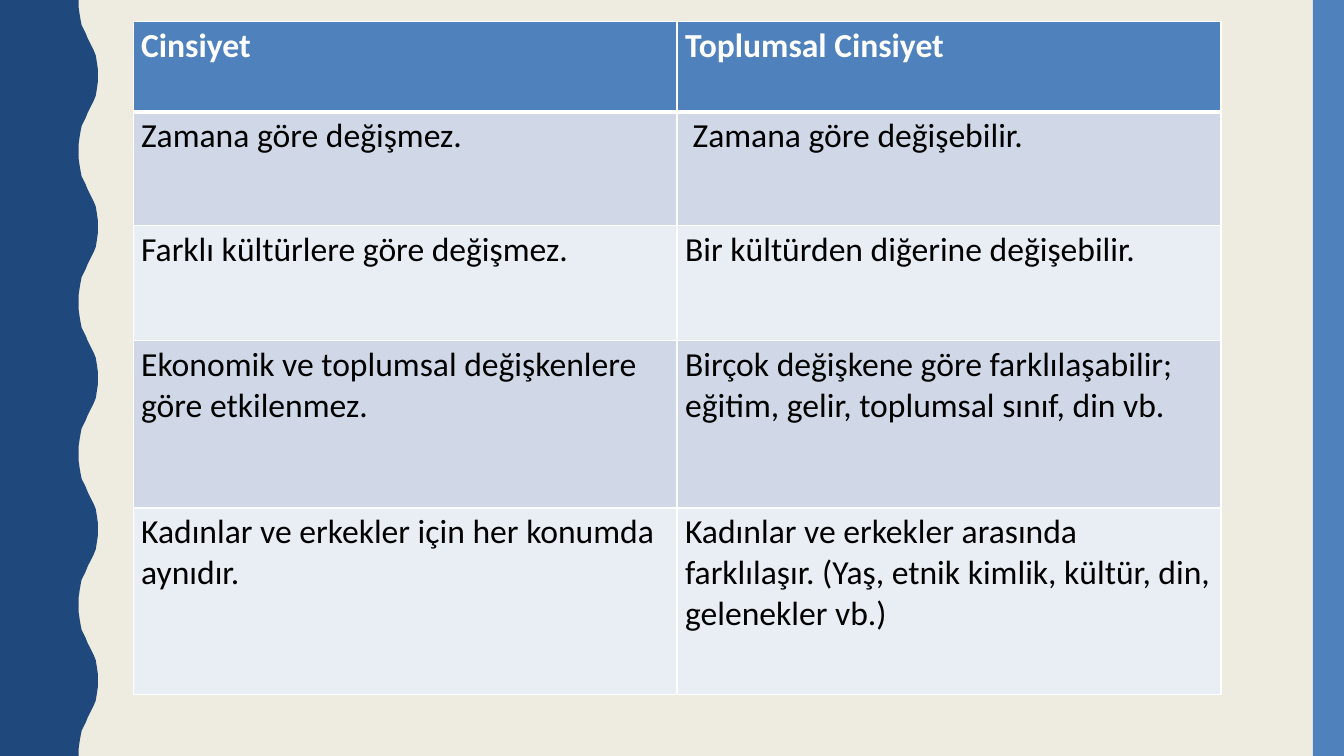
from lxml import etree
from pptx import Presentation
from pptx import util as u
from pptx.dml.color import RGBColor
from pptx.enum import shapes, text
from pptx.oxml.ns import qn

# Content
HEADINGS = ("Cinsiyet", "Toplumsal Cinsiyet")
COMPARISONS = [
    ("Zamana göre değişmez.", " Zamana göre değişebilir."),
    ("Farklı kültürlere göre değişmez.", "Bir kültürden diğerine değişebilir."),
    ("Ekonomik ve toplumsal değişkenlere göre etkilenmez.",
     "Birçok değişkene göre farklılaşabilir; eğitim, gelir, toplumsal sınıf, din vb."),
    ("Kadınlar ve erkekler için her konumda aynıdır.",
     "Kadınlar ve erkekler arasında farklılaşır. "
     "(Yaş, etnik kimlik, kültür, din, gelenekler vb.)"),
]
COLORS = {
    "background": "EEECE1", "wave": "1F497D", "accent": "4F81BD",
    "odd": "D0D8E8", "even": "E9EDF4", "white": "FFFFFF", "black": "000000",
}

# Measures in inches
WIDTH, HEIGHT = 13.33, 7.5
STRIPE_WIDTH = 0.31
TABLE_LEFT, TABLE_TOP, COLUMN_WIDTH = 1.32, 0.21, 5.395
ROW_HEIGHTS = (0.9, 1.13, 1.14, 1.66, 1.85)
WAVE_COUNT = 5
WAVE_LENGTH = HEIGHT / WAVE_COUNT
RISING_EDGE = [
    (0.78, 0), (0.78, 0.07), (0.79, 0.14), (0.8, 0.2), (0.81, 0.25),
    (0.83, 0.29), (0.85, 0.33), (0.87, 0.38), (0.89, 0.42), (0.91, 0.46),
    (0.93, 0.5), (0.95, 0.55), (0.96, 0.61), (0.97, 0.68), (0.97, 0.75),
]


def rgb(name):
    return RGBColor.from_string(COLORS[name])


def paint(shape, color):
    shape.shadow.inherit = False
    shape.fill.solid()
    shape.fill.fore_color.rgb = rgb(color)
    shape.line.fill.background()


def set_borders(cell, **points):
    properties = cell._tc.get_or_add_tcPr()
    for side in "LRTB":
        line = etree.SubElement(properties, qn(f"a:ln{side}"),
                                w=str(u.Pt(points.get(side, 1))))
        fill = etree.SubElement(line, qn("a:solidFill"))
        etree.SubElement(fill, qn("a:srgbClr"), val=COLORS["white"])


def write(cell, words, *, color, fill, bold=False, size=24, font="Calibri"):
    cell.fill.solid()
    cell.fill.fore_color.rgb = rgb(fill)
    cell.margin_left = cell.margin_right = u.Inches(0.08)
    cell.margin_top = cell.margin_bottom = u.Inches(0.04)
    cell.vertical_anchor = text.MSO_ANCHOR.TOP
    run = cell.text_frame.paragraphs[0].add_run()
    run.text = words
    run.font.name, run.font.size, run.font.bold = font, u.Pt(size), bold
    run.font.color.rgb = rgb(color)


def add_wave(slide):
    falling_edge = [(x, WAVE_LENGTH - y) for x, y in RISING_EDGE[-2:0:-1]]
    edge = [(x, y + i * WAVE_LENGTH)
            for i in range(WAVE_COUNT) for x, y in RISING_EDGE + falling_edge]
    outline = edge + [(RISING_EDGE[0][0], HEIGHT), (0, HEIGHT)]
    wave = slide.shapes.build_freeform(0, 0)
    wave.add_line_segments([(u.Inches(x), u.Inches(y)) for x, y in outline])
    paint(wave.convert_to_shape(), "wave")


def add_comparison(slide):
    rows = [HEADINGS, *COMPARISONS]
    table = slide.shapes.add_table(
        len(rows), len(HEADINGS), u.Inches(TABLE_LEFT), u.Inches(TABLE_TOP),
        u.Inches(COLUMN_WIDTH * len(HEADINGS)), u.Inches(sum(ROW_HEIGHTS))).table
    table.horz_banding = False
    for column in table.columns:
        column.width = u.Inches(COLUMN_WIDTH)
    for r, (row, height) in enumerate(zip(rows, ROW_HEIGHTS)):
        table.rows[r].height = u.Inches(height)
        for c, words in enumerate(row):
            cell = table.cell(r, c)
            if r == 0:
                set_borders(cell, B=3)
                write(cell, words, color="white", fill="accent", bold=True)
            else:
                set_borders(cell, T=3 if r == 1 else 1)
                write(cell, words, color="black", fill="odd" if r % 2 else "even")


def main():
    deck = Presentation()
    deck.slide_width, deck.slide_height = u.Inches(WIDTH), u.Inches(HEIGHT)
    slide = deck.slides.add_slide(deck.slide_layouts[6])

    # Background, wavy left edge and right stripe
    slide.background.fill.solid()
    slide.background.fill.fore_color.rgb = rgb("background")
    add_wave(slide)
    stripe = slide.shapes.add_shape(
        shapes.MSO_SHAPE.RECTANGLE, u.Inches(WIDTH - STRIPE_WIDTH), 0,
        u.Inches(STRIPE_WIDTH), u.Inches(HEIGHT))
    paint(stripe, "accent")

    # Comparison table
    add_comparison(slide)
    deck.save("out.pptx")


if __name__ == "__main__":
    main()
